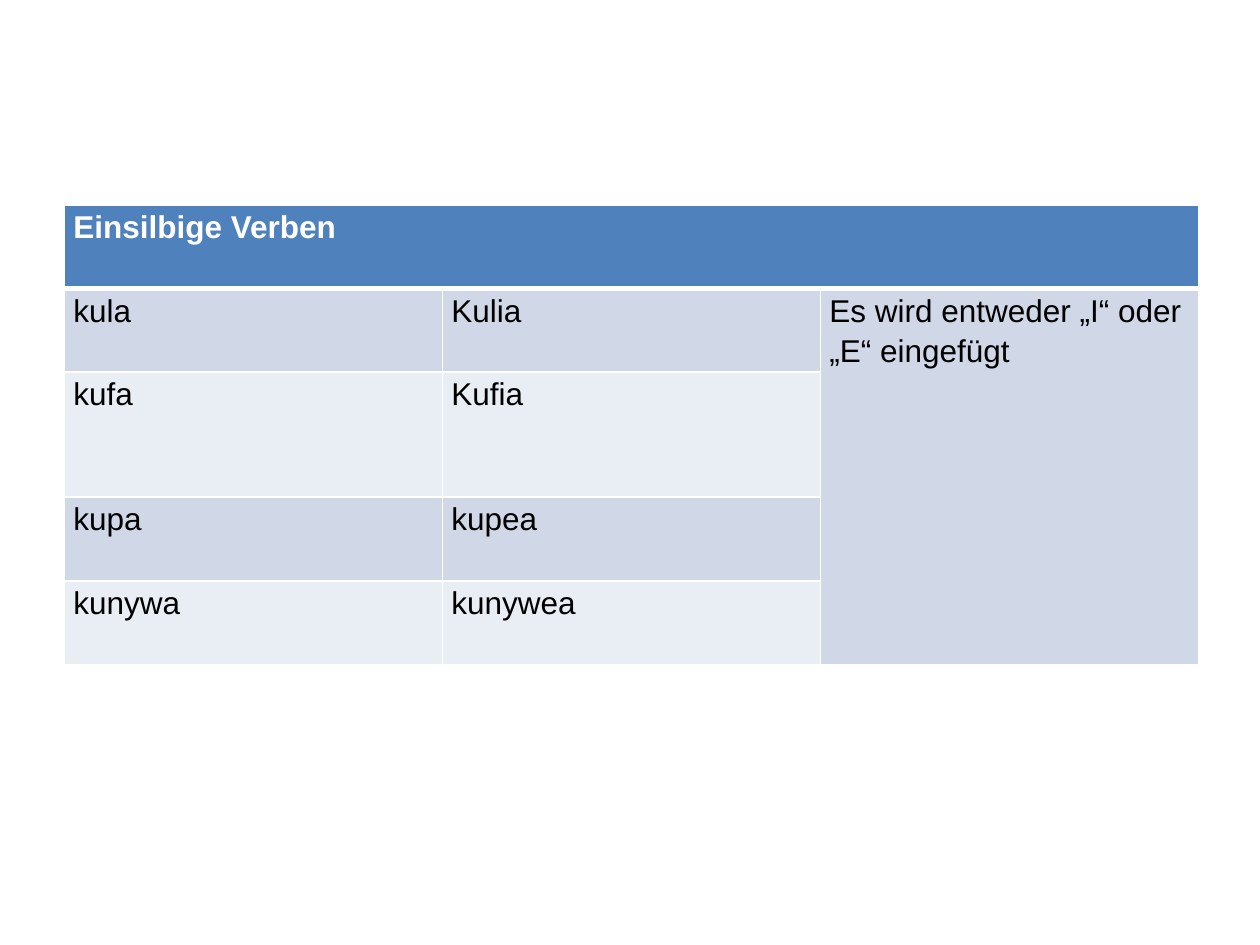
"""Build a slide with a table of one-syllable Swahili verbs."""
from lxml.etree import SubElement
from pptx import Presentation
from pptx.dml.color import RGBColor
from pptx.oxml.ns import qn
from pptx.util import Pt

HUES = {"head": "4F81BD", "odd": "D0D8E8", "even": "E9EDF4",
        "white": "FFFFFF", "black": "000000"}
ROWS = [
    ["Einsilbige Verben", "", ""],
    ["kula", "Kulia", "Es wird entweder „I“ oder „E“ eingefügt"],
    ["kufa", "Kufia", ""],
    ["kupa", "kupea", ""],
    ["kunywa", "kunywea", ""],
]
TALL = [47.8, 47.8, 71.5, 47.8, 47.8]


def edge(cell, side, width):
    line = SubElement(cell._tc.get_or_add_tcPr(), qn("a:ln" + side), w=str(Pt(width)))
    fill = SubElement(line, qn("a:solidFill"))
    SubElement(fill, qn("a:srgbClr"), val=HUES["white"])


deck = Presentation()
deck.slide_width, deck.slide_height = Pt(720), Pt(540)
slide = deck.slides.add_slide(deck.slide_layouts[6])
frame = slide.shapes.add_table(5, 3, Pt(37), Pt(117), Pt(648), Pt(sum(TALL)))
table = frame.table
for col in table.columns:
    col.width = Pt(216)

for i, texts in enumerate(ROWS):
    table.rows[i].height = Pt(TALL[i])
    band = "head" if i == 0 else "odd" if i % 2 else "even"
    for j, text in enumerate(texts):
        cell = table.cell(i, j)
        cell.margin_left = cell.margin_right = Pt(5)
        cell.margin_top = cell.margin_bottom = 0
        edge(cell, "L", 1)
        edge(cell, "R", 1)
        edge(cell, "T", 3 if i == 1 else 1)
        edge(cell, "B", 3 if i == 0 else 1)
        cell.fill.solid()
        cell.fill.fore_color.rgb = RGBColor.from_string(HUES[band])
        if not text:
            continue
        cell.text_frame.text = text
        para = cell.text_frame.paragraphs[0]
        para.line_spacing = 1.15
        font = para.runs[0].font
        font.name, font.size, font.bold = "Arial", Pt(18), i == 0
        font.color.rgb = RGBColor.from_string(HUES["black" if i else "white"])

table.cell(0, 0).merge(table.cell(0, 2))
table.cell(1, 2).merge(table.cell(4, 2))
deck.save("out.pptx")
